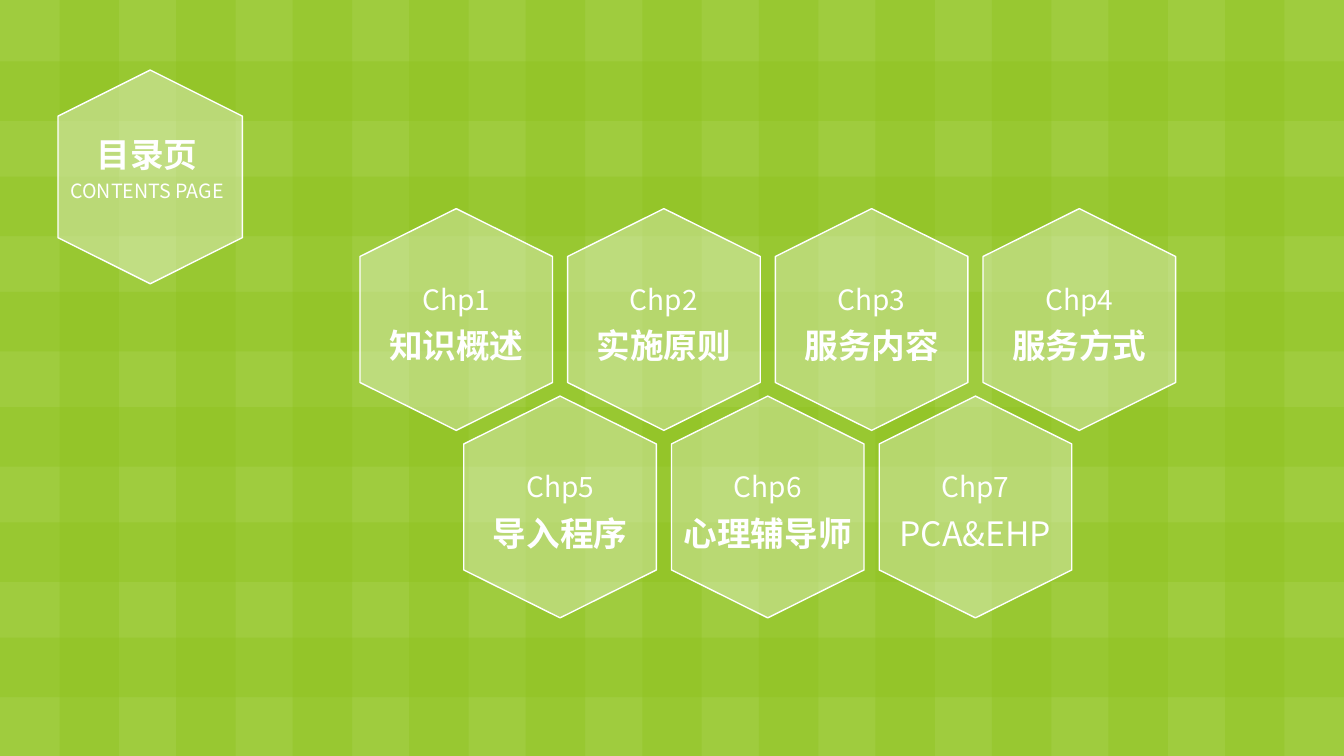
from lxml import etree
from pptx import Presentation
from pptx.dml.color import RGBColor
from pptx.enum import shapes, text
from pptx.oxml import ns
from pptx.util import Inches, Pt

WHITE = RGBColor(0xFF, 0xFF, 0xFF)
LIGHT_GREEN = RGBColor(0x9F, 0xCC, 0x3E)
STRIPE_GREEN = RGBColor(0x8F, 0xC3, 0x20)
FONT = "Noto Sans CJK SC"
PAGE_WIDTH, PAGE_HEIGHT = 13.33, 7.5
STRIPE = 0.59
HEXAGON_WIDTH, HEXAGON_HEIGHT = 1.91, 2.2
COLUMN_STEP = 2.06

CHAPTER_ROWS = [
    (3.57, 2.07, ["知识概述", "实施原则", "服务内容", "服务方式"]),
    (4.6, 3.93, ["导入程序", "心理辅导师", "PCA&EHP"]),
]


def paint(shape, color, opacity, outline=None):
    """Give a shape a see-through fill and an optional thin outline."""
    shape.shadow.inherit = False
    shape.fill.solid()
    shape.fill.fore_color.rgb = color
    fill_color = shape.fill._xPr.find(ns.qn("a:solidFill"))[0]
    etree.SubElement(fill_color, ns.qn("a:alpha"), val=str(opacity * 1000))
    if outline is None:
        shape.line.fill.background()
    else:
        shape.line.color.rgb = outline
        shape.line.width = Pt(1)


def add_lines(page, left, top, width, height, lines):
    """Add a centred text box with one paragraph per (words, size, bold)."""
    box = page.shapes.add_textbox(
        Inches(left), Inches(top), Inches(width), Inches(height))
    frame = box.text_frame
    frame.word_wrap = True
    for index, (words, size, bold) in enumerate(lines):
        para = frame.paragraphs[0] if index == 0 else frame.add_paragraph()
        para.alignment = text.PP_ALIGN.CENTER
        para.line_spacing = 1.22
        span = para.add_run()
        span.text = words
        span.font.size = Pt(size)
        span.font.bold = bold
        span.font.color.rgb = WHITE
        span.font.name = FONT
        etree.SubElement(span.font._element, ns.qn("a:ea"), typeface=FONT)
    return frame


def add_checked_background(page):
    page.background.fill.solid()
    page.background.fill.fore_color.rgb = LIGHT_GREEN
    rows = [(0, 0.61 + 1.143 * row, PAGE_WIDTH, STRIPE) for row in range(6)]
    columns = [(0.59 + 1.156 * column, 0, STRIPE, PAGE_HEIGHT)
               for column in range(11)]
    for place in rows + columns:
        stripe = page.shapes.add_shape(
            shapes.MSO_SHAPE.RECTANGLE, *map(Inches, place))
        paint(stripe, STRIPE_GREEN, 42)


def add_title(page, left, top, width, height):
    hexagon = page.shapes.add_shape(
        shapes.MSO_SHAPE.HEXAGON, Inches(left), Inches(top),
        Inches(width), Inches(height))
    hexagon.rotation = 270
    paint(hexagon, WHITE, 36, WHITE)
    frame = add_lines(page, left + 0.05, top + 0.35, 1.96, 0.88,
                      [("目录页", 24, True), ("CONTENTS PAGE", 14, False)])
    # A hanging first line moves the heading slightly left of centre.
    properties = frame.paragraphs[0]._p.get_or_add_pPr()
    properties.set("marL", "0")
    properties.set("indent", str(Inches(-0.12)))


def add_chapter(page, left, top, number, name):
    shoulder = 0.475
    middle, right = left + HEXAGON_WIDTH / 2, left + HEXAGON_WIDTH
    bottom = top + HEXAGON_HEIGHT
    corners = [(right, top + shoulder), (right, bottom - shoulder),
               (middle, bottom), (left, bottom - shoulder),
               (left, top + shoulder)]
    builder = page.shapes.build_freeform(Inches(middle), Inches(top))
    builder.add_line_segments([(Inches(x), Inches(y)) for x, y in corners])
    paint(builder.convert_to_shape(), WHITE, 32, WHITE)
    add_lines(page, left, top + 0.61, HEXAGON_WIDTH, 1,
              [(f"Chp{number}", 20, False), (name, 24, not name.isascii())])


def add_chapters(page):
    number = 1
    for left, top, names in CHAPTER_ROWS:
        for column, name in enumerate(names):
            add_chapter(page, left + column * COLUMN_STEP, top, number, name)
            number += 1


def main():
    deck = Presentation()
    deck.slide_width = Inches(PAGE_WIDTH)
    deck.slide_height = Inches(PAGE_HEIGHT)
    page = deck.slides.add_slide(deck.slide_layouts[6])
    add_checked_background(page)
    add_title(page, 0.43, 0.84, 2.12, 1.83)
    add_chapters(page)
    deck.save("out.pptx")


if __name__ == "__main__":
    main()
